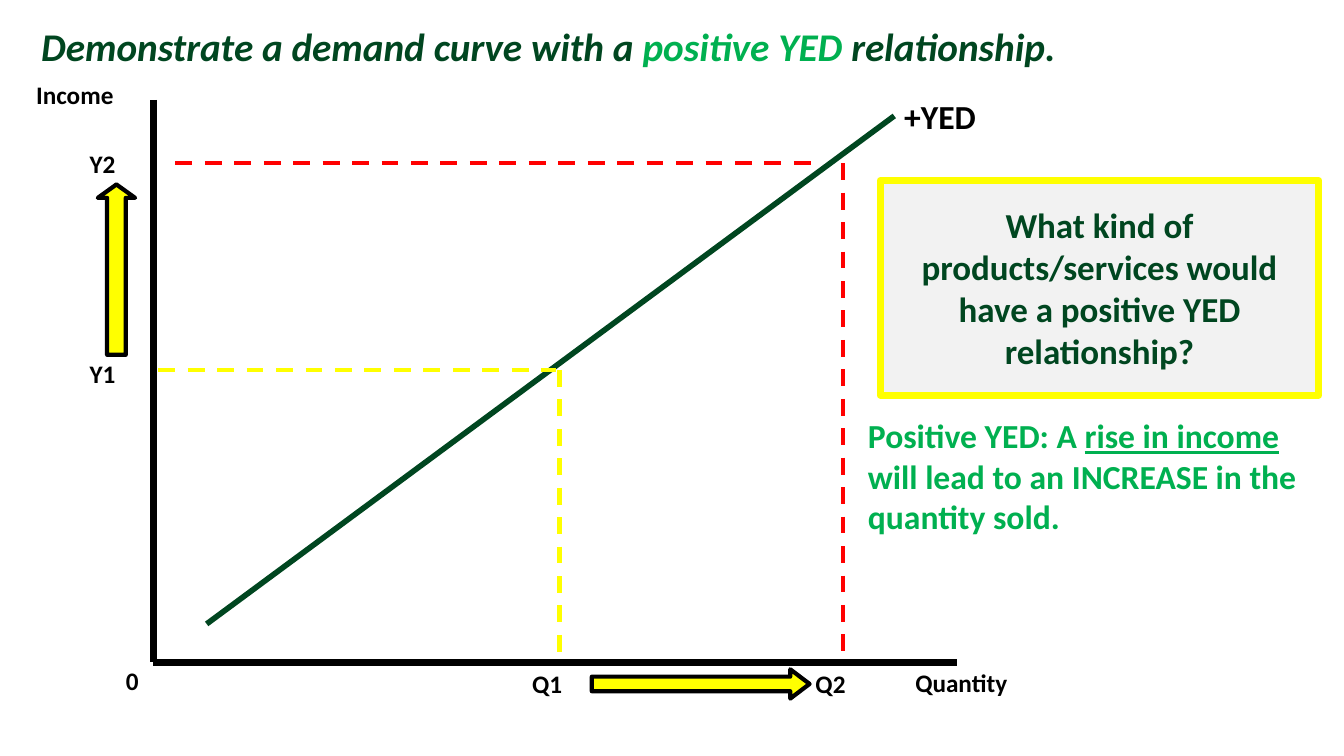
from pptx import Presentation
from pptx.dml.color import RGBColor
from pptx.enum.dml import MSO_LINE
from pptx.enum.shapes import MSO_CONNECTOR, MSO_SHAPE
from pptx.enum.text import MSO_ANCHOR, MSO_AUTO_SIZE, PP_ALIGN
from pptx.oxml.ns import qn
from pptx.util import Inches, Pt
from lxml.etree import SubElement

FONT = "Calibri"
BLACK, RED, YELLOW = "000000", "FF0000", "FFFF00"
DARK_GREEN, GREEN, PALE_GREY = "004620", "00B050", "F2F2F2"

# Positions of the graph, in inches
AXIS_X, AXIS_Y = 1.52, 6.57
Q1, Q2 = 5.55, 8.36
Y1, Y2 = 3.67, 1.62


def rgb(color):
    return RGBColor.from_string(color)


def write(paragraph, text, size=18, color=BLACK, italic=False, underline=False):
    run = paragraph.add_run()
    run.text = text
    font = run.font
    font.name, font.size, font.bold = FONT, Pt(size), True
    font.italic, font.underline = italic, underline
    font.color.rgb = rgb(color)


def add_text(slide, box, *parts, **style):
    """Each part is a text, or a text with the format that differs for it."""
    text_box = slide.shapes.add_textbox(*map(Inches, box))
    frame = text_box.text_frame
    frame.word_wrap = True
    frame.auto_size = MSO_AUTO_SIZE.SHAPE_TO_FIT_TEXT
    for part in parts:
        text, changes = (part, {}) if isinstance(part, str) else part
        write(frame.paragraphs[0], text, **{**style, **changes})


def add_line(slide, start, end, color, width, dashed=False):
    line = slide.shapes.add_connector(
        MSO_CONNECTOR.STRAIGHT, *map(Inches, (*start, *end)))
    line.line.color.rgb = rgb(color)
    line.line.width = Pt(width)
    if dashed:
        line.line.dash_style = MSO_LINE.DASH
    SubElement(line._element.spPr, qn("a:effectLst"))


def add_outlined(slide, kind, box, fill, outline, width):
    shape = slide.shapes.add_shape(kind, *map(Inches, box))
    shape.shadow.inherit = False
    shape.fill.solid()
    shape.fill.fore_color.rgb = rgb(fill)
    shape.line.color.rgb = rgb(outline)
    shape.line.width = Pt(width)
    return shape


def add_change_arrow(slide, kind, box, head):
    arrow = add_outlined(slide, kind, box, YELLOW, BLACK, 3)
    arrow.adjustments[0] = 0.5
    arrow.adjustments[1] = head


def add_question(slide, box, text):
    question = add_outlined(slide, MSO_SHAPE.RECTANGLE, box, PALE_GREY, YELLOW, 5)
    frame = question.text_frame
    frame.word_wrap = True
    frame.vertical_anchor = MSO_ANCHOR.MIDDLE
    frame.paragraphs[0].alignment = PP_ALIGN.CENTER
    write(frame.paragraphs[0], text, size=25, color=DARK_GREEN)


def main():
    prs = Presentation()
    prs.slide_width, prs.slide_height = Inches(13.33), Inches(7.5)
    slide = prs.slides.add_slide(prs.slide_layouts[6])

    # Axes
    add_line(slide, (AXIS_X, 0.99), (AXIS_X, AXIS_Y), BLACK, 5)
    add_line(slide, (9.49, AXIS_Y), (AXIS_X, AXIS_Y), BLACK, 5)
    for label, left, top in (("Income", 0.26, 0.74), ("Quantity", 8.98, 6.57),
                             ("0", 1.15, 6.55)):
        add_text(slide, (left, top, 2.1, 0.4), label)

    # Title
    add_text(slide, (0.31, 0.17, 12.76, 0.57),
             "Demonstrate a demand curve with a ",
             ("positive YED ", {"color": GREEN}), "relationship.",
             size=28, color=DARK_GREEN, italic=True)

    # Demand curve
    add_line(slide, (2.05, 6.19), (8.87, 1.15), DARK_GREEN, 4)
    add_text(slide, (8.87, 0.9, 2.1, 0.5), "+YED", size=24)

    # Guides from the axes to the curve
    for left, right, income, quantity, color in ((1.57, 5.51, Y1, Q1, YELLOW),
                                                 (1.74, 8.14, Y2, Q2, RED)):
        add_line(slide, (left, income), (right, income), color, 3, dashed=True)
        add_line(slide, (quantity, income), (quantity, 6.55), color, 3, dashed=True)

    # Income and quantity levels
    for label, left, top in (("Y1", 0.79, 3.51), ("Y2", 0.79, 1.42),
                             ("Q1", 5.18, 6.58), ("Q2", 7.99, 6.58)):
        add_text(slide, (left, top, 0.73, 0.4), label)

    # Rise in income and in quantity
    add_change_arrow(slide, MSO_SHAPE.UP_ARROW, (0.97, 1.83, 0.37, 1.69), 0.36)
    add_change_arrow(slide, MSO_SHAPE.RIGHT_ARROW, (5.87, 6.64, 2.16, 0.29), 0.66)

    # Question and explanation
    add_question(slide, (8.73, 1.79, 4.35, 2.13),
                 "What kind of products/services would have a positive YED relationship?")
    add_text(slide, (8.51, 4.07, 4.78, 1.31), "Positive YED: A ",
             ("rise in income ", {"underline": True}),
             "will lead to an INCREASE in the quantity sold.",
             size=24, color=GREEN)

    prs.save("out.pptx")


if __name__ == "__main__":
    main()
